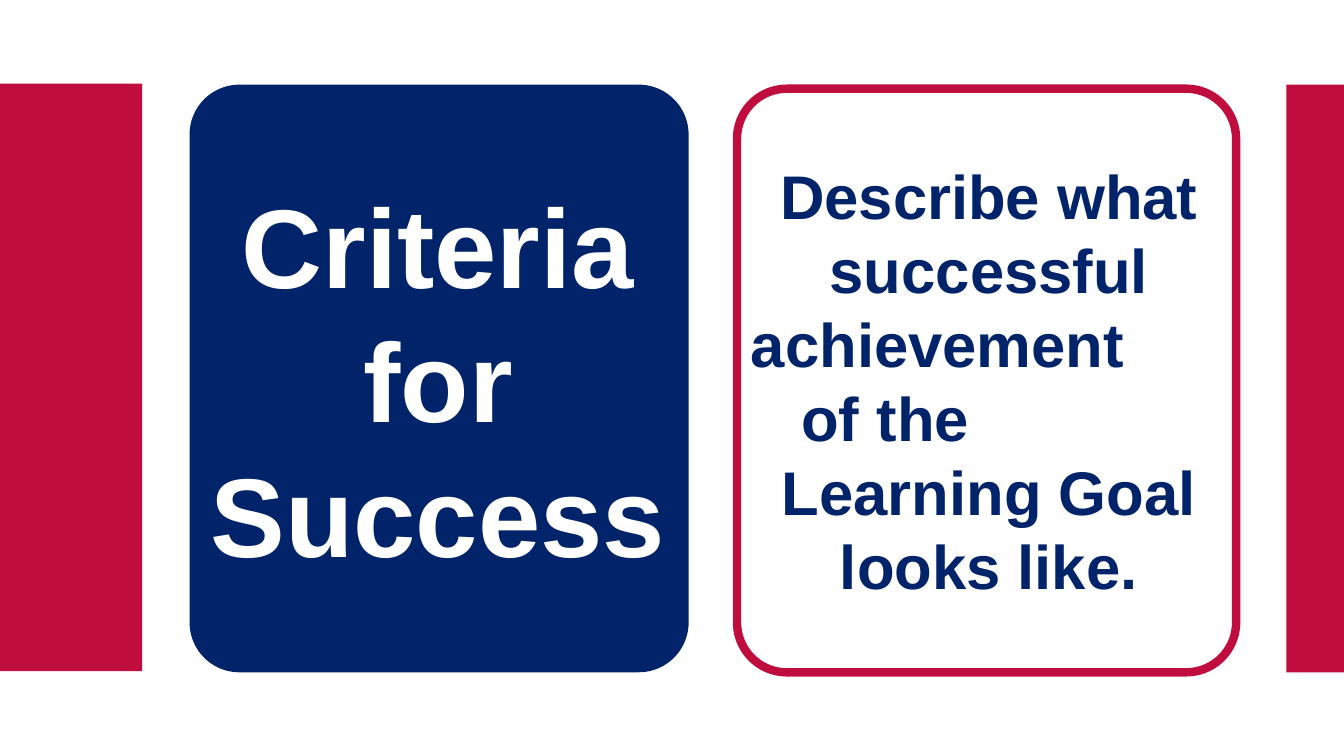
from dataclasses import dataclass

from pptx import Presentation
from pptx.dml.color import RGBColor
from pptx.enum.shapes import MSO_SHAPE
from pptx.enum.text import MSO_ANCHOR, PP_ALIGN
from pptx.util import Inches, Pt

RECT = MSO_SHAPE.RECTANGLE
ROUNDED = MSO_SHAPE.ROUNDED_RECTANGLE
LEFT = PP_ALIGN.LEFT
CENTER = PP_ALIGN.CENTER
MIDDLE = MSO_ANCHOR.MIDDLE
BLANK_LAYOUT = 6


@dataclass(frozen=True)
class Theme:
    font: str = "Arial"
    navy: str = "012369"
    red: str = "BF0D3E"
    white: str = "FFFFFF"
    title_size: int = 80
    body_size: int = 44
    border_width: int = 6
    corner: float = 0.1


def write(p, text, *, font, size, color, bold=True, align=CENTER, indent=0):
    """Put one formatted run in paragraph p; indent is in inches."""
    p.alignment = align
    if indent:
        p._p.get_or_add_pPr().set("marL", str(Inches(indent)))
    r = p.add_run()
    r.text = text
    r.font.name = font
    r.font.size = Pt(size)
    r.font.bold = bold
    r.font.color.rgb = RGBColor.from_string(color)


class SlideBuilder:
    def __init__(self, slide, theme):
        self.slide = slide
        self.theme = theme

    def shape(self, kind, box, fill, line=None):
        s = self.slide.shapes.add_shape(kind, *map(Inches, box))
        s.shadow.inherit = False
        s.fill.solid()
        s.fill.fore_color.rgb = RGBColor.from_string(fill)
        if line:
            s.line.color.rgb = RGBColor.from_string(line)
            s.line.width = Pt(self.theme.border_width)
        else:
            s.line.fill.background()
        return s

    def band(self, box):
        return self.shape(RECT, box, self.theme.red)

    def card(self, box, fill, line=None):
        s = self.shape(ROUNDED, box, fill, line)
        s.adjustments[0] = self.theme.corner
        return s

    def text(self, box, lines, size, color):
        """Add a text box; lines holds (text, align, indent) tuples."""
        tb = self.slide.shapes.add_textbox(*map(Inches, box))
        tf = tb.text_frame
        tf.word_wrap = True
        tf.vertical_anchor = MIDDLE
        for i, (text, align, indent) in enumerate(lines):
            p = tf.add_paragraph() if i else tf.paragraphs[0]
            write(p, text, font=self.theme.font, size=size, color=color,
                  align=align, indent=indent)
        return tb


def main():
    prs = Presentation()
    prs.slide_width = Inches(13.33)
    prs.slide_height = Inches(7.5)
    theme = Theme()
    slide = prs.slides.add_slide(prs.slide_layouts[BLANK_LAYOUT])
    b = SlideBuilder(slide, theme)

    b.card((1.88, 0.84, 4.95, 5.83), theme.navy)
    b.card((7.31, 0.88, 4.95, 5.79), theme.white, theme.red)
    b.band((0, 0.83, 1.41, 5.83))
    b.band((12.76, 0.84, 0.57, 5.83))

    b.text((1.87, 1.68, 4.95, 4.14), [("Criteria for Success", CENTER, 0)],
           theme.title_size, theme.white)
    b.text((7.35, 1.5, 4.92, 4.54), [
        ("Describe what successful", CENTER, 0),
        ("achievement", LEFT, 0),
        ("of the", LEFT, 0.5),
        ("Learning Goal looks like.", CENTER, 0),
    ], theme.body_size, theme.navy)

    prs.save("out.pptx")


if __name__ == "__main__":
    main()
